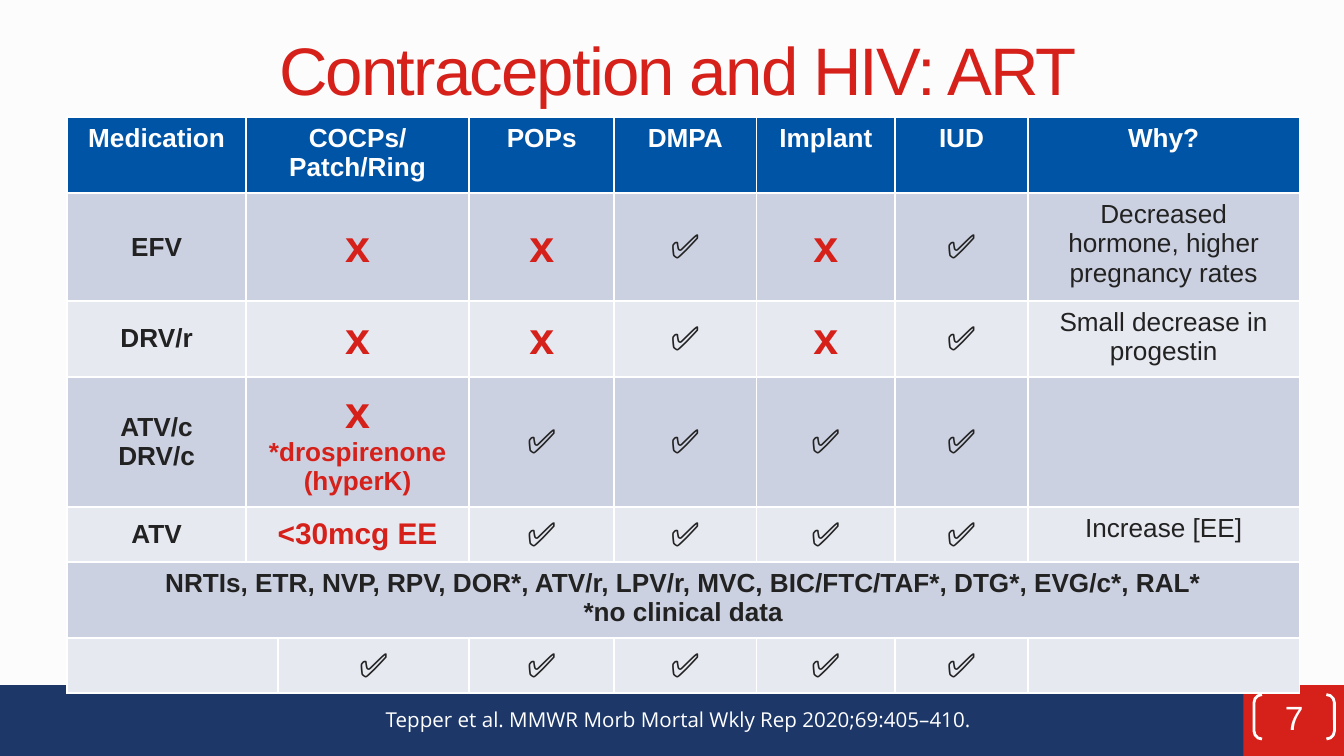
from pptx import Presentation
from pptx.dml.color import RGBColor
from pptx.enum.shapes import MSO_SHAPE
from pptx.enum.text import MSO_ANCHOR, PP_ALIGN
from pptx.util import Cm, Pt

COLORS = {
    "back": "FCFCFC", "navy": "1C3768", "red": "D6201A", "blue": "0054A6",
    "band": "CCD1E1", "light": "E7E9F1", "ink": "222222", "white": "FFFFFF",
}

# Text formats by role
FORMATS = {
    "title": {"size": 36, "color": "red"},
    "header": {"size": 14, "bold": True, "color": "white"},
    "label": {"size": 14, "bold": True, "color": "ink"},
    "reason": {"size": 14, "bold": False, "color": "ink"},
    "yes": {"size": 18, "bold": False, "color": "ink"},
    "no": {"size": 24, "bold": True, "color": "red"},
    "dose": {"size": 16, "bold": True, "color": "red"},
    "warning": {"size": 14, "bold": True, "color": "red"},
    "page": {"size": 18, "color": "white"},
    "citation": {"size": 11, "color": "white", "name": "Open Sans"},
}

YES, NO = "✅", "x"
COL_WIDTHS = [3.38, 0.43, 3.61, 2.74, 2.69, 2.62, 2.51, 5.13]
ROW_HEIGHT = 1.04
HEADER = ["Medication", "COCPs/ Patch/Ring", "POPs", "DMPA", "Implant", "IUD", "Why?"]
# Medication, five methods, reason
MEDICATIONS = [
    ["EFV", NO, NO, YES, NO, YES, "Decreased hormone, higher pregnancy rates"],
    ["DRV/r", NO, NO, YES, NO, YES, "Small decrease in progestin"],
    ["ATV/c\nDRV/c", "x\n*drospirenone (hyperK)", YES, YES, YES, YES, ""],
    ["ATV", "<30mcg EE", YES, YES, YES, YES, "Increase [EE]"],
]
SAFE = ("NRTIs, ETR, NVP, RPV, DOR*, ATV/r, LPV/r, MVC, BIC/FTC/TAF*, "
        "DTG*, EVG/c*, RAL*\n*no clinical data")


def rgb(name):
    return RGBColor.from_string(COLORS[name])


def write(tf, text, role, align=PP_ALIGN.CENTER):
    """Write one paragraph per line; a mark keeps its own format."""
    for i, line in enumerate(text.split("\n")):
        p = tf.paragraphs[0] if i == 0 else tf.add_paragraph()
        p.alignment = align
        r = p.add_run()
        r.text = line
        fmt = {"name": "Arial", **FORMATS[{YES: "yes", NO: "no"}.get(line, role)]}
        r.font.color.rgb = rgb(fmt.pop("color"))
        fmt["size"] = Pt(fmt["size"])
        for key, value in fmt.items():
            setattr(r.font, key, value)
    return tf


def add_box(s, box, text, role, **frame):
    tf = s.shapes.add_textbox(*map(Cm, box)).text_frame
    for key, value in frame.items():
        setattr(tf, key, value)
    return write(tf, text, role)


def add_bar(s, box, color):
    sp = s.shapes.add_shape(MSO_SHAPE.RECTANGLE, *map(Cm, box))
    sp.shadow.inherit = False
    sp.fill.solid()
    sp.fill.fore_color.rgb = rgb(color)
    sp.line.fill.background()


def add_page_number(s, box, text):
    sp = s.shapes.add_shape(MSO_SHAPE.DOUBLE_BRACKET, *map(Cm, box))
    sp.shadow.inherit = False
    sp.adjustments[0] = 0.18
    sp.fill.background()
    sp.line.color.rgb = rgb("white")
    sp.line.width = Pt(1.5)
    tf = sp.text_frame
    for side in ("left", "top", "right", "bottom"):
        setattr(tf, f"margin_{side}", 0)
    tf.vertical_anchor = MSO_ANCHOR.MIDDLE
    write(tf, text, "page")


def fill_cell(cell, text, role, middle=True):
    if text:
        write(cell.text_frame, text, role)
        if middle:
            cell.vertical_anchor = MSO_ANCHOR.MIDDLE


def add_medication_table(s, left, top):
    n_rows, n_cols = len(MEDICATIONS) + 3, len(COL_WIDTHS)
    table = s.shapes.add_table(n_rows, n_cols, Cm(left), Cm(top), Cm(sum(COL_WIDTHS)),
                               Cm(ROW_HEIGHT * n_rows)).table
    for col, width in zip(table.columns, COL_WIDTHS):
        col.width = Cm(width)
    for i, row in enumerate(table.rows):
        row.height = Cm(ROW_HEIGHT)
        for cell in row.cells:
            cell.fill.solid()
            cell.fill.fore_color.rgb = rgb("blue" if i == 0 else "band" if i % 2 else "light")

    # Header and medication rows: the second entry spans two columns
    slots = [0, 1, *range(3, n_cols)]
    for i, row in enumerate([HEADER, *MEDICATIONS]):
        table.cell(i, 1).merge(table.cell(i, 2))
        roles = ["header"] * 7 if i == 0 else ["label"] + ["dose"] * 5 + ["reason"]
        for j, text, role in zip(slots, row, roles):
            if "\n" in text and role == "dose":
                role = "warning"
            fill_cell(table.cell(i, j), text, role, role not in ("header", "reason"))

    # Medications without restrictions
    safe, marks = n_rows - 2, n_rows - 1
    table.cell(safe, 0).merge(table.cell(safe, n_cols - 1))
    fill_cell(table.cell(safe, 0), SAFE, "label", middle=False)
    table.cell(marks, 0).merge(table.cell(marks, 1))
    for j in range(2, n_cols - 1):
        fill_cell(table.cell(marks, j), YES, "yes")


def main():
    prs = Presentation()
    prs.slide_width, prs.slide_height = Cm(25.4), Cm(14.29)
    s = prs.slides.add_slide(prs.slide_layouts[6])
    s.background.fill.solid()
    s.background.fill.fore_color.rgb = rgb("back")

    # Footer bars
    add_bar(s, (0, 12.95, 25.4, 1.34), "navy")
    add_bar(s, (23.5, 12.95, 1.9, 1.34), "red")

    # Title with tightened letters
    tf = add_box(s, (1.27, 0.1, 23.09, 2.39), "Contraception and HIV: ART", "title",
                 word_wrap=True, vertical_anchor=MSO_ANCHOR.MIDDLE)
    tf.paragraphs[0].runs[0].font._element.set("spc", "-100")

    add_medication_table(s, 1.27, 2.21)

    # Footer text
    add_page_number(s, (23.7, 13.13, 1.52, 0.84), "7")
    add_box(s, (6.96, 13.23, 11.73, 0.74),
            "Tepper et al. MMWR Morb Mortal Wkly Rep 2020;69:405–410.", "citation",
            word_wrap=False)
    prs.save("out.pptx")


if __name__ == "__main__":
    main()
